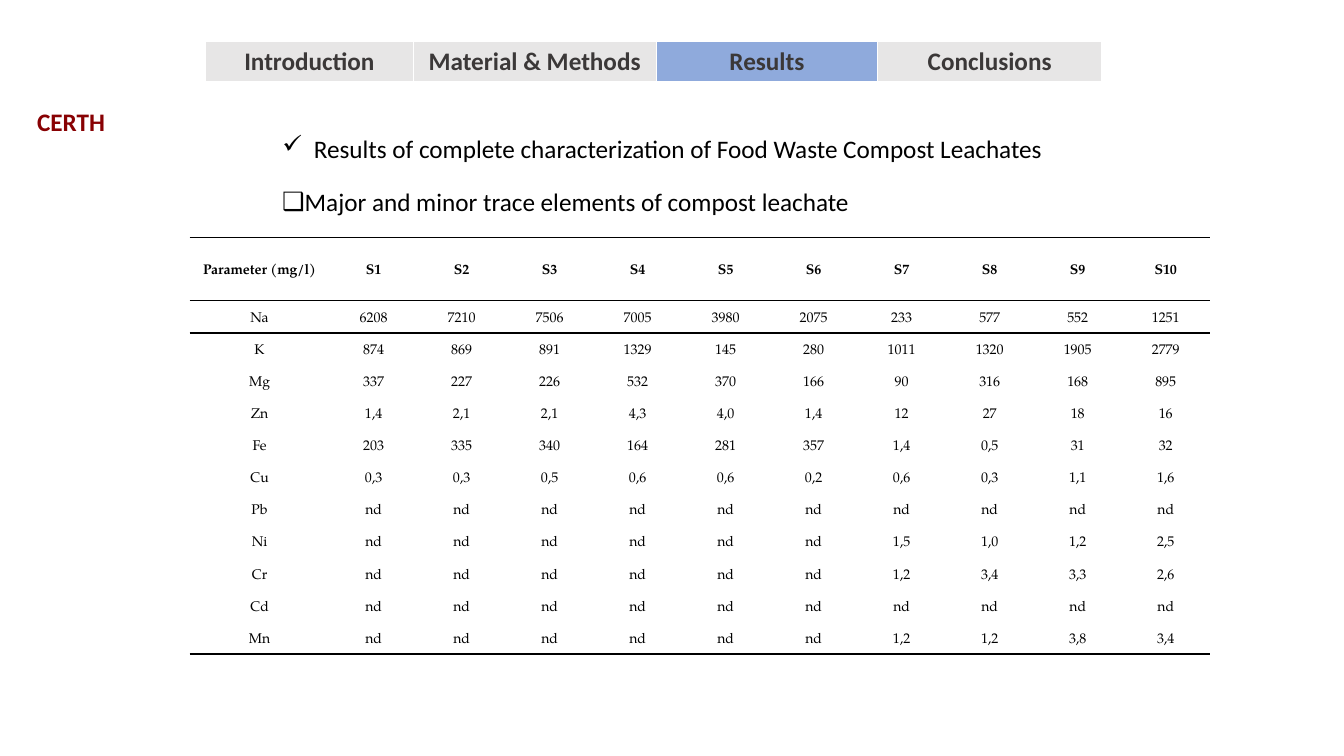
from lxml import etree
from pptx import Presentation
from pptx.dml.color import RGBColor
from pptx.enum import text as txt
from pptx.oxml.ns import qn
from pptx.util import Pt

# Content
partner = "CERTH"
sections = ["Introduction", "Material & Methods", "Results", "Conclusions"]
current_section = "Results"
heading = "Results of complete characterization of Food Waste Compost Leachates"
subheading = "Major and minor trace elements of compost leachate"
concentrations = [
    ["Parameter (mg/l)"] + [f"S{n}" for n in range(1, 11)],
    ["Na", "6208", "7210", "7506", "7005", "3980", "2075", "233", "577", "552", "1251"],
    ["K", "874", "869", "891", "1329", "145", "280", "1011", "1320", "1905", "2779"],
    ["Mg", "337", "227", "226", "532", "370", "166", "90", "316", "168", "895"],
    ["Zn", "1,4", "2,1", "2,1", "4,3", "4,0", "1,4", "12", "27", "18", "16"],
    ["Fe", "203", "335", "340", "164", "281", "357", "1,4", "0,5", "31", "32"],
    ["Cu", "0,3", "0,3", "0,5", "0,6", "0,6", "0,2", "0,6", "0,3", "1,1", "1,6"],
    ["Pb"] + ["nd"] * 10,
    ["Ni"] + ["nd"] * 6 + ["1,5", "1,0", "1,2", "2,5"],
    ["Cr"] + ["nd"] * 6 + ["1,2", "3,4", "3,3", "2,6"],
    ["Cd"] + ["nd"] * 10,
    ["Mn"] + ["nd"] * 6 + ["1,2", "1,2", "3,8", "3,4"],
]

# Style
COLORS = {"partner": "880103", "nav_text": "3B3838", "nav": "E7E6E6",
          "nav_current": "8FAADC", "white": "FFFFFF", "black": "000000"}
SANS, SERIF = "Calibri", "TeX Gyre Pagella"
PLAIN_TABLE = "{2D5ABB26-0587-4C30-8999-92F81FD0307C}"
CENTER, JUSTIFY = txt.PP_ALIGN.CENTER, txt.PP_ALIGN.JUSTIFY


def format_text(paragraph, color, size=18, name=SANS, bold=False, align=None):
    paragraph.alignment = align
    for run in paragraph.runs:
        font = run.font
        font.size, font.name, font.bold = Pt(size), name, bold
        font.color.rgb = RGBColor.from_string(COLORS[color])


def fill_box(box, content, place, wrap):
    box.left, box.top, box.width, box.height = (Pt(v) for v in place)
    frame = box.text_frame
    frame.text = content
    frame.word_wrap = wrap
    frame.vertical_anchor = txt.MSO_ANCHOR.TOP
    frame.auto_size = txt.MSO_AUTO_SIZE.SHAPE_TO_FIT_TEXT
    return frame.paragraphs[0]


def set_bullet(paragraph, char, margin, indent):
    props = paragraph._p.get_or_add_pPr()
    props.set("marL", str(Pt(margin)))
    props.set("indent", str(Pt(indent)))
    etree.SubElement(props, qn("a:buChar")).set("char", char)


def add_plain_table(left, top, widths, heights):
    frame = slide.shapes.add_table(len(heights), len(widths), Pt(left), Pt(top),
                                   Pt(sum(widths)), Pt(sum(heights)))
    table = frame.table
    table.first_row = table.horz_banding = False
    table._tbl.tblPr.find(qn("a:tableStyleId")).text = PLAIN_TABLE
    for column, width in zip(table.columns, widths):
        column.width = Pt(width)
    for row, height in zip(table.rows, heights):
        row.height = Pt(height)
    return table


def set_borders(cell, color, **weights):
    props = cell._tc.get_or_add_tcPr()
    for side, weight in weights.items():
        line = etree.SubElement(props, qn(f"a:ln{side}"), w=str(Pt(weight)))
        fill = etree.SubElement(line, qn("a:solidFill"))
        etree.SubElement(fill, qn("a:srgbClr"), val=COLORS[color])


prs = Presentation()
prs.slide_width, prs.slide_height = Pt(960), Pt(540)
slide = prs.slides.add_slide(prs.slide_layouts[1])

# Partner label
label = fill_box(slide.shapes.add_textbox(0, 0, 0, 0), partner,
                 (19.4, 72.7, 63.4, 28.8), False)
format_text(label, "partner", bold=True)

# Section navigation
navigation = add_plain_table(146.9, 29.5, [148.3, 173.5, 158.4, 159.8], [29.5])
for cell, section in zip(navigation.iter_cells(), sections):
    cell.text = section
    format_text(cell.text_frame.paragraphs[0], "nav_text", bold=True, align=CENTER)
    set_borders(cell, "white", L=1, R=1, T=1, B=3)
    cell.fill.solid()
    shade = "nav_current" if section == current_section else "nav"
    cell.fill.fore_color.rgb = RGBColor.from_string(COLORS[shade])

# Heading and subheading
title = fill_box(slide.shapes.title, heading, (189.4, 91.4, 567.4, 28.8), False)
set_bullet(title, "✓", 22.5, -22.5)
format_text(title, "black", align=CENTER)

body = fill_box(slide.placeholders[1], subheading, (64.1, 131, 708.5, 28.1), True)
set_bullet(body, "❑", 144, -13.7)
body.line_spacing, body.space_before = 0.95, Pt(0)
format_text(body, "black", align=JUSTIFY)

# Element concentrations
last = len(concentrations) - 1
elements = add_plain_table(135.4, 169.9, [100] + [62.9] * 10, [45] + [22.94] * last)
for r, values in enumerate(concentrations):
    for c, value in enumerate(values):
        cell = elements.cell(r, c)
        cell.text = value
        cell.margin_left = cell.margin_right = cell.margin_top = cell.margin_bottom = 0
        cell.vertical_anchor = txt.MSO_ANCHOR.MIDDLE
        entry = cell.text_frame.paragraphs[0]
        entry.line_spacing = Pt(13)
        format_text(entry, "black", 10, SERIF, bold=r == 0, align=CENTER)
        if r <= 1:
            set_borders(cell, "black", T=1)
        if r in (0, last):
            set_borders(cell, "black", B=1)
        cell.fill.background()

prs.save("out.pptx")
